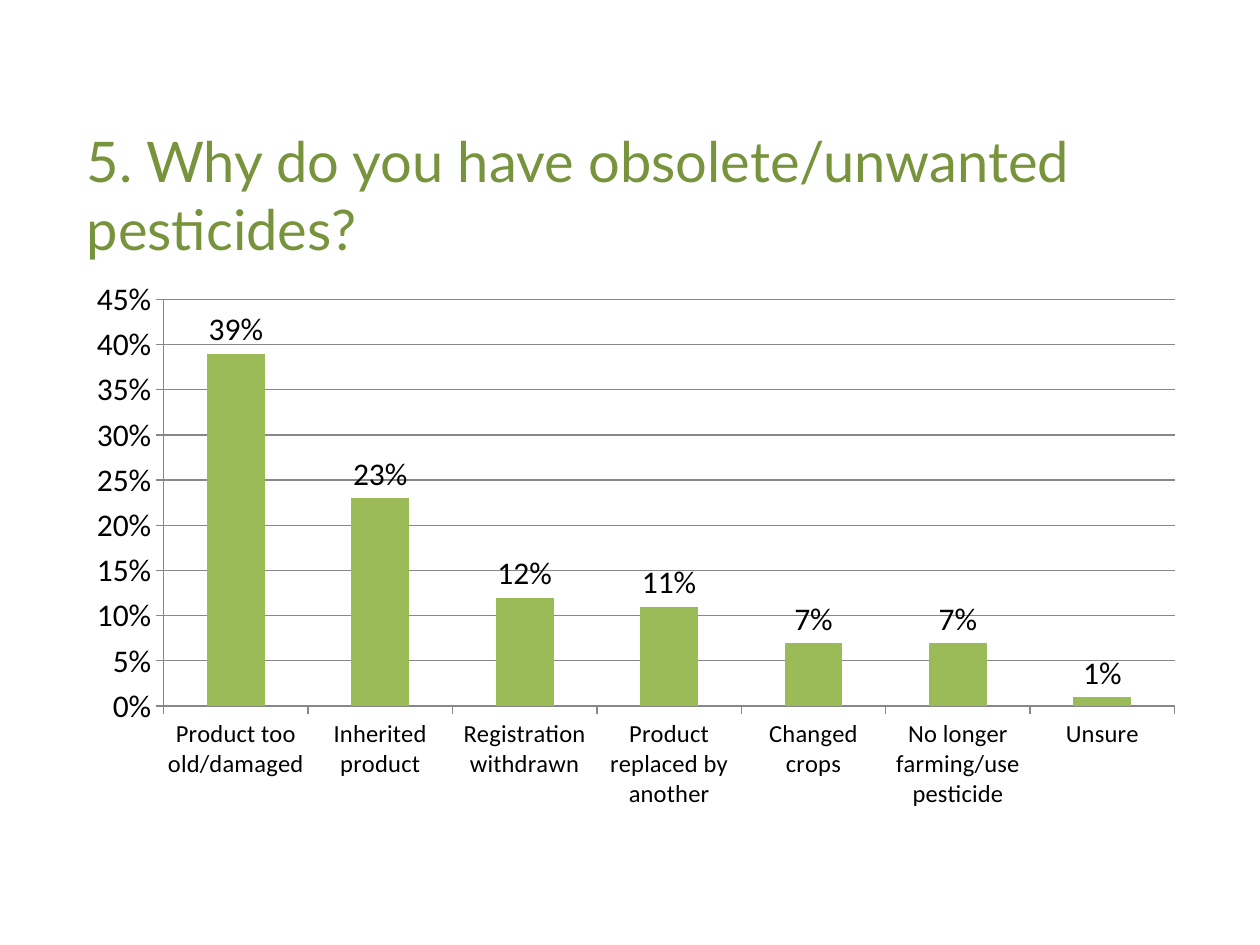
import pptx
import pptx.util
import pptx.chart.data
import pptx.dml.color
import pptx.enum.chart
import pptx.enum.text

COLORS = {"title": "77933C", "bar": "9BBB59", "axis": "878787", "text": "000000"}
WIDTH, HEIGHT = pptx.util.Inches(10), pptx.util.Inches(7.5)
LEFT, SPAN = 0.059, 0.891
REASONS = {
    "Product too old/damaged": 0.39,
    "Inherited product": 0.23,
    "Registration withdrawn": 0.12,
    "Product replaced by another": 0.11,
    "Changed crops": 0.07,
    "No longer farming/use pesticide": 0.07,
    "Unsure": 0.01,
}


def color(name):
    """Return the named palette colour."""
    return pptx.dml.color.RGBColor.from_string(COLORS[name])


def band(top, height):
    """Return the box of a content band from shares of the slide height."""
    return int(WIDTH * LEFT), int(HEIGHT * top), int(WIDTH * SPAN), int(HEIGHT * height)


def set_font(font, name, size, shade):
    """Give a font its typeface, point size and colour."""
    font.name = name
    font.size = pptx.util.Pt(size)
    font.color.rgb = color(shade)


def style_line(line):
    """Draw an axis or grid line thin and grey."""
    line.color.rgb = color("axis")
    line.width = pptx.util.Pt(0.75)


def add_title(s, text):
    """Add the question as a wrapped heading."""
    tf = s.shapes.add_textbox(*band(0.143, 0.125)).text_frame
    tf.word_wrap = True
    tf.vertical_anchor = pptx.enum.text.MSO_ANCHOR.MIDDLE
    p = tf.paragraphs[0]
    p.text = text
    set_font(p.font, "Lato", 32, "title")


def style_axis(axis, size):
    """Set an axis's line, outward ticks and label font."""
    axis.major_tick_mark = pptx.enum.chart.XL_TICK_MARK.OUTSIDE
    style_line(axis.format.line)
    set_font(axis.tick_labels.font, "Calibri", size, "text")


def add_reason_chart(s):
    """Add the column chart of reasons with percentage labels."""
    data = pptx.chart.data.CategoryChartData(number_format="0%")
    data.categories = list(REASONS)
    data.add_series("Series 1", list(REASONS.values()))
    kind = pptx.enum.chart.XL_CHART_TYPE.COLUMN_CLUSTERED
    chart = s.shapes.add_chart(kind, *band(0.285, 0.583), data).chart
    chart.has_legend = False
    chart.has_title = False
    set_font(chart.font, "Calibri", 18, "text")

    style_axis(chart.category_axis, 14)
    value_axis = chart.value_axis
    style_axis(value_axis, 18)
    value_axis.minimum_scale = 0
    value_axis.maximum_scale = 0.45
    value_axis.major_unit = 0.05
    value_axis.tick_labels.number_format = "0%"
    value_axis.tick_labels.number_format_is_linked = False
    style_line(value_axis.major_gridlines.format.line)

    plot = chart.plots[0]
    plot.gap_width = 150
    plot.vary_by_categories = False
    fill = plot.series[0].format.fill
    fill.solid()
    fill.fore_color.rgb = color("bar")
    plot.has_data_labels = True
    labels = plot.data_labels
    labels.show_value = True
    labels.number_format = "0%"
    labels.number_format_is_linked = False
    labels.position = pptx.enum.chart.XL_LABEL_POSITION.OUTSIDE_END
    set_font(labels.font, "Calibri", 18, "text")


def main():
    """Build and save the survey slide."""
    prs = pptx.Presentation()
    prs.slide_width, prs.slide_height = WIDTH, HEIGHT
    s = prs.slides.add_slide(prs.slide_layouts[6])
    add_title(s, "5. Why do you have obsolete/unwanted pesticides?")
    add_reason_chart(s)
    prs.save("out.pptx")


if __name__ == "__main__":
    main()
